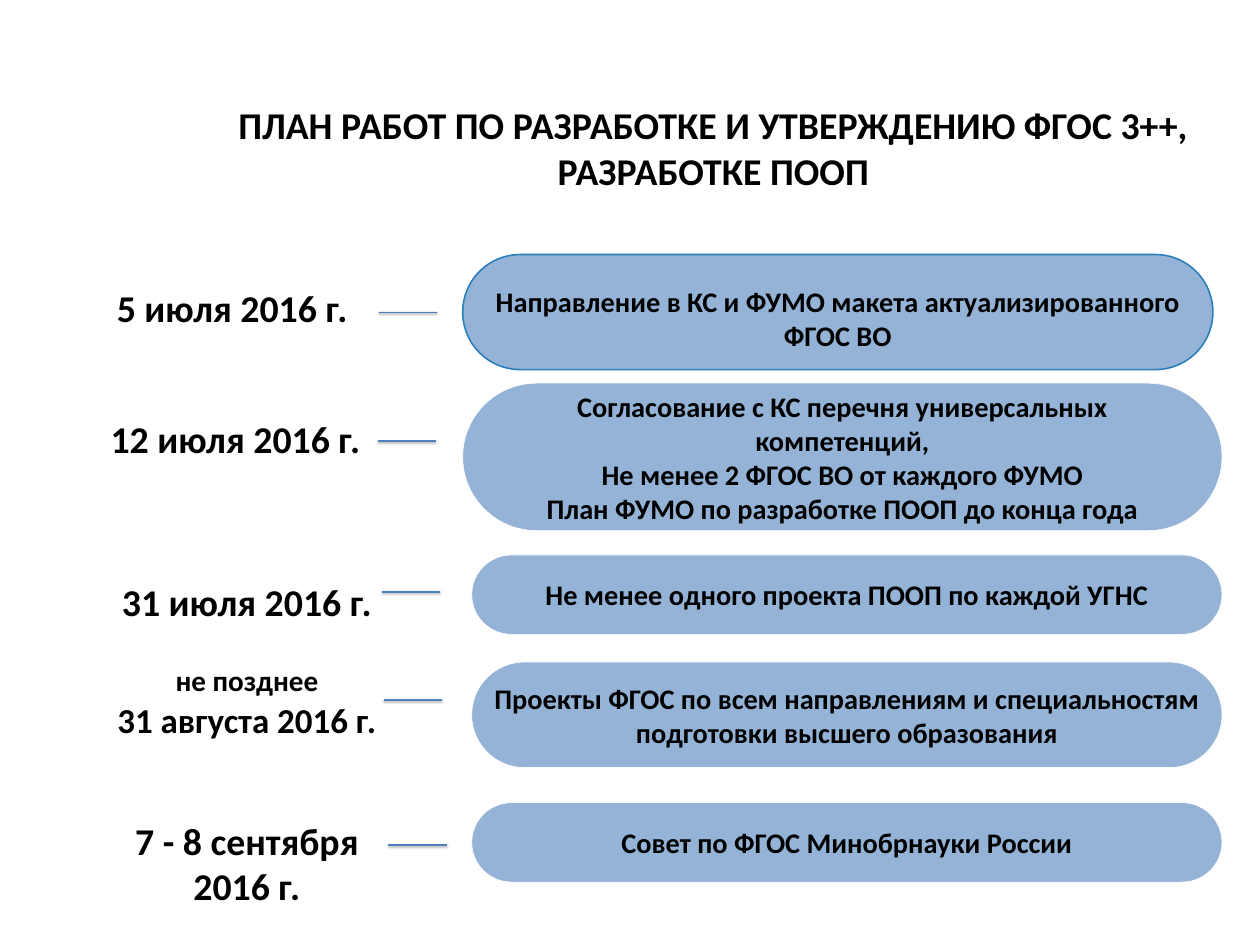
from dataclasses import dataclass

from lxml import etree
from pptx import Presentation
from pptx.dml.color import RGBColor
from pptx.enum.shapes import MSO_CONNECTOR, MSO_SHAPE
from pptx.enum.text import MSO_ANCHOR, PP_ALIGN
from pptx.oxml.ns import qn
from pptx.util import Inches, Pt

STRAIGHT = MSO_CONNECTOR.STRAIGHT
ROUNDED = MSO_SHAPE.ROUNDED_RECTANGLE
CENTER = PP_ALIGN.CENTER
TOP, MIDDLE = MSO_ANCHOR.TOP, MSO_ANCHOR.MIDDLE


@dataclass(frozen=True)
class Theme:
    font: str = "Calibri"
    text: RGBColor = RGBColor(0, 0, 0)
    pill: RGBColor = RGBColor(0x95, 0xB3, 0xD7)
    pill_edge: RGBColor = RGBColor(255, 255, 255)
    accent_edge: RGBColor = RGBColor(0x29, 0x80, 0xB9)
    dash: RGBColor = RGBColor(0x4F, 0x81, 0xBD)
    heading_size: float = 48
    pill_size: float = 36
    note_size: float = 37
    deadline_size: float = 44.4


@dataclass(frozen=True)
class Box:
    left: float
    top: float
    width: float
    height: float

    def lengths(self):
        return [Inches(v) for v in (self.left, self.top, self.width, self.height)]


@dataclass(frozen=True)
class Step:
    """One row; date and dash positions are offsets from the row box."""
    box: Box
    pill_left: float
    date: tuple
    date_at: tuple
    dash_at: tuple
    tasks: tuple
    accented: bool = False


THEME = Theme()
DATE_WIDTH, DATE_HEIGHT = 5.43, 1.59
DASH_LENGTH = 1.03
ROW_LEFT = 1.24

STEPS = (
    Step(Box(ROW_LEFT, 4.49, 20.15, 2.03), 6.92, ("5 июля 2016 г.",),
         (0, 0.45), (5.44, 1.02),
         ("Направление в КС и ФУМО макета актуализированного ФГОС ВО",), True),
    Step(Box(ROW_LEFT, 6.76, 20.31, 2.6), 6.92, ("12 июля 2016 г.",),
         (0.06, 0.5), (5.42, 1.02),
         ("Согласование с КС перечня универсальных компетенций,",
          "Не менее 2 ФГОС ВО от каждого ФУМО",
          "План ФУМО по разработке ПООП до конца года")),
    Step(Box(ROW_LEFT, 9.79, 20.31, 1.4), 7.08, ("31 июля 2016 г.",),
         (0.26, 0.33), (5.49, 0.65),
         ("Не менее одного проекта ПООП по каждой УГНС",)),
    Step(Box(ROW_LEFT, 11.68, 20.31, 1.86), 7.08,
         ("не позднее", "31 августа 2016 г."),
         (0.26, 0), (5.53, 0.67),
         ("Проекты ФГОС по всем направлениям и специальностям "
          "подготовки высшего образования",)),
    Step(Box(ROW_LEFT, 14.16, 20.31, 1.4), 7.08, ("7 - 8 сентября 2016 г.",),
         (0.26, 0.18), (5.61, 0.75),
         ("Совет по ФГОС Минобрнауки России",)),
)


def write_text(shape, lines, *, sizes, anchor=TOP, indent=0, top_inset=0.05,
               line_spacing=None, space_before=0):
    frame = shape.text_frame
    frame.word_wrap = True
    frame.vertical_anchor = anchor
    frame.margin_left = frame.margin_right = Inches(0.1)
    frame.margin_top, frame.margin_bottom = Inches(top_inset), Inches(0.05)
    for index, (line, size) in enumerate(zip(lines, sizes)):
        paragraph = frame.add_paragraph() if index else frame.paragraphs[0]
        paragraph.alignment = CENTER
        if indent:
            properties = paragraph._p.get_or_add_pPr()
            properties.set("marL", str(Inches(indent)))
            properties.set("indent", "0")
        if line_spacing:
            paragraph.line_spacing = line_spacing
        if index and space_before:
            paragraph.space_before = Pt(space_before)
        run = paragraph.add_run()
        run.text = line
        run.font.name = THEME.font
        run.font.size = Pt(size)
        run.font.bold = True
        run.font.color.rgb = THEME.text


def add_heading(slide, box, lines, **text_format):
    shape = slide.shapes.add_textbox(*box.lengths())
    write_text(shape, lines, indent=0.28, top_inset=0.08, **text_format)


def add_pill(slide, box, tasks, accented):
    pill = slide.shapes.add_shape(ROUNDED, *box.lengths())
    pill.adjustments[0] = 0.5
    pill.shadow.inherit = False
    pill.fill.solid()
    pill.fill.fore_color.rgb = THEME.pill
    pill.line.color.rgb = THEME.accent_edge if accented else THEME.pill_edge
    pill.line.width = Pt(2 if accented else 0.75)
    write_text(pill, tasks, sizes=[THEME.pill_size] * len(tasks), anchor=MIDDLE,
               top_inset=0.25 if accented else 0.05)


def add_dash(slide, left, top):
    """Draw a short horizontal line with a soft shadow below it."""
    dash = slide.shapes.add_connector(STRAIGHT, Inches(left), Inches(top),
                                      Inches(left + DASH_LENGTH), Inches(top))
    dash.line.color.rgb = THEME.dash
    dash.line.width = Pt(2)
    effects = etree.SubElement(dash._element.spPr, qn("a:effectLst"))
    shadow = etree.SubElement(effects, qn("a:outerShdw"), blurRad=str(Pt(3.1)),
                              dist=str(Pt(1.6)), dir="5400000", rotWithShape="0")
    color = etree.SubElement(shadow, qn("a:srgbClr"), val="000000")
    etree.SubElement(color, qn("a:alpha"), val="38000")


def add_step(slide, step):
    row = step.box
    add_pill(slide, Box(row.left + step.pill_left, row.top,
                        row.width - step.pill_left, row.height),
             step.tasks, step.accented)
    date_left, date_top = step.date_at
    date_box = Box(row.left + date_left, row.top + date_top, DATE_WIDTH, DATE_HEIGHT)
    if len(step.date) > 1:
        add_heading(slide, date_box, step.date, line_spacing=0.9, space_before=7,
                    sizes=(THEME.note_size, THEME.deadline_size))
    else:
        add_heading(slide, date_box, step.date, sizes=(THEME.heading_size,))
    dash_left, dash_top = step.dash_at
    add_dash(slide, row.left + dash_left, row.top + dash_top)


def main():
    presentation = Presentation()
    presentation.slide_width = Inches(22.22)
    presentation.slide_height = Inches(16.67)
    slide = presentation.slides.add_slide(presentation.slide_layouts[6])
    add_heading(slide, Box(3.55, 1.72, 17.78, 1.75),
                ("ПЛАН РАБОТ ПО РАЗРАБОТКЕ И УТВЕРЖДЕНИЮ ФГОС 3++, РАЗРАБОТКЕ ПООП",),
                sizes=(THEME.heading_size,))
    for step in STEPS:
        add_step(slide, step)
    presentation.save("out.pptx")


if __name__ == "__main__":
    main()
